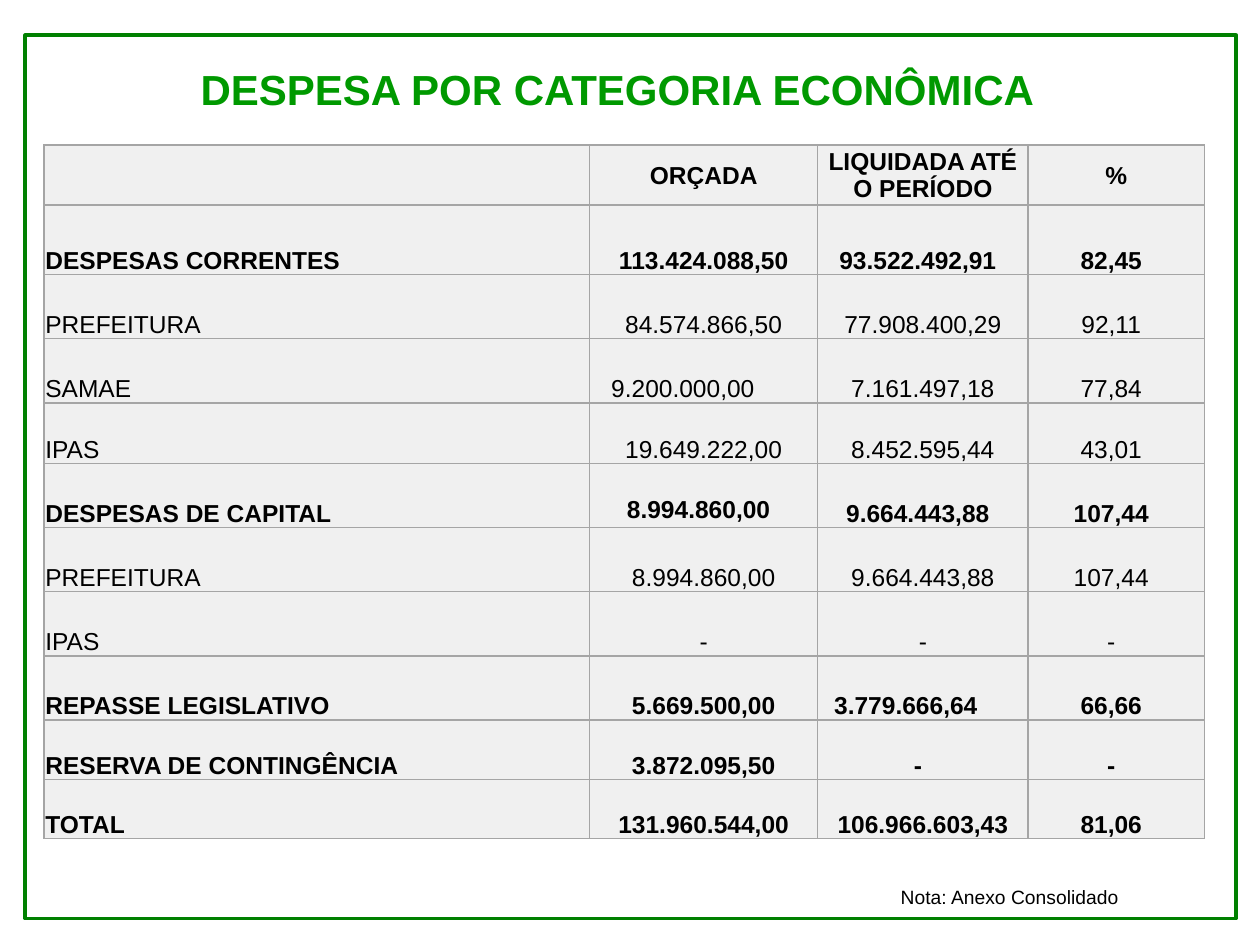
from lxml import etree
from pptx import Presentation
from pptx.dml.color import RGBColor
from pptx.enum import shapes, text
from pptx.oxml import ns
from pptx.util import Inches, Pt

TITLE = "DESPESA POR CATEGORIA ECONÔMICA"
NOTE = "Nota: Anexo Consolidado"
HEADER = ("", "ORÇADA", "LIQUIDADA ATÉ O PERÍODO", "%")
ROWS = [
    ("DESPESAS CORRENTES", "113.424.088,50", "93.522.492,91", "82,45"),
    ("PREFEITURA", "84.574.866,50", "77.908.400,29", "92,11"),
    ("SAMAE", "9.200.000,00", "7.161.497,18", "77,84"),
    ("IPAS", "19.649.222,00", "8.452.595,44", "43,01"),
    ("DESPESAS DE CAPITAL", "8.994.860,00", "9.664.443,88", "107,44"),
    ("PREFEITURA", "8.994.860,00", "9.664.443,88", "107,44"),
    ("IPAS", "-", "-", "-"),
    ("REPASSE LEGISLATIVO", "5.669.500,00", "3.779.666,64", "66,66"),
    ("RESERVA DE CONTINGÊNCIA", "3.872.095,50", "-", "-"),
    ("TOTAL", "131.960.544,00", "106.966.603,43", "81,06"),
]
DETAILS = {"PREFEITURA", "SAMAE", "IPAS"}
COL_WIDTHS = (4.33, 1.81, 1.67, 1.4)
ROW_HEIGHTS = (0.47, 0.55, 0.51, 0.51, 0.48, 0.51, 0.51, 0.51, 0.51, 0.47, 0.47)
RIGHT_INSETS = (0.09, 0.01, 0.01, 0.09)
INSET_EXCEPTIONS = {(1, 2): 0.09, (3, 1): 0.34, (5, 1): 0.09,
                    (5, 2): 0.09, (8, 2): 0.28, (9, 2): 0.09}
BOTTOM_EXCEPTIONS = {(5, 1): 0.03}
FRAME, GREEN, BLACK, GRAY, PALE = "008000", "009900", "000000", "A5A5A5", "F0F0F0"


def rgb(value):
    return RGBColor.from_string(value)


def write(tf, content, align, size, color=BLACK, bold=False):
    p = tf.paragraphs[0]
    p.alignment = align
    r = p.add_run()
    r.text = content
    for name, value in {"name": "Arial", "size": Pt(size), "bold": bold}.items():
        setattr(r.font, name, value)
    r.font.color.rgb = rgb(color)
    return p


def add_text(s, box, content, align, size, anchor, **style):
    tf = s.shapes.add_textbox(*map(Inches, box)).text_frame
    tf.word_wrap = True
    tf.vertical_anchor = anchor
    return write(tf, content, align, size, **style)


def set_borders(cell):
    tc_pr = cell._tc.get_or_add_tcPr()
    for i, side in enumerate(("lnL", "lnR", "lnT", "lnB")):
        ln = etree.Element(ns.qn("a:" + side), w=str(Pt(1)))
        fill = etree.SubElement(ln, ns.qn("a:solidFill"))
        etree.SubElement(fill, ns.qn("a:srgbClr"), val=GRAY)
        tc_pr.insert(i, ln)


def fill_cell(cell, row, col, content, bold):
    cell.fill.solid()
    cell.fill.fore_color.rgb = rgb(PALE)
    set_borders(cell)
    right = INSET_EXCEPTIONS.get((row, col), RIGHT_INSETS[col] if row else 0.01)
    layout = {
        "margin_left": Inches(0.01),
        "margin_top": Inches(0.01),
        "margin_right": Inches(right),
        "margin_bottom": Inches(BOTTOM_EXCEPTIONS.get((row, col), 0)),
        "vertical_anchor": text.MSO_ANCHOR.BOTTOM if row else text.MSO_ANCHOR.MIDDLE,
    }
    for name, value in layout.items():
        setattr(cell, name, value)
    if content:
        align = text.PP_ALIGN.CENTER if col else text.PP_ALIGN.JUSTIFY
        write(cell.text_frame, content, align, 14, bold=bold)


def add_expenses(s):
    data = [HEADER] + ROWS
    box = (0.35, 1.15, sum(COL_WIDTHS), sum(ROW_HEIGHTS))
    table = s.shapes.add_table(len(data), len(HEADER), *map(Inches, box)).table
    for column, width in zip(table.columns, COL_WIDTHS):
        column.width = Inches(width)
    for row, height in zip(table.rows, ROW_HEIGHTS):
        row.height = Inches(height)
    for i, values in enumerate(data):
        for j, content in enumerate(values):
            fill_cell(table.cell(i, j), i, j, content, values[0] not in DETAILS)


def main():
    prs = Presentation()
    prs.slide_width, prs.slide_height = Inches(10), Inches(7.5)
    s = prs.slides.add_slide(prs.slide_layouts[6])
    frame = s.shapes.add_shape(shapes.MSO_SHAPE.RECTANGLE,
                               *map(Inches, (0.2, 0.28, 9.61, 7.01)))
    frame.shadow.inherit = False
    frame.fill.background()
    frame.line.color.rgb = rgb(FRAME)
    frame.line.width = Pt(2.25)
    title = add_text(s, (0.59, 0, 8.62, 1.45), TITLE, text.PP_ALIGN.CENTER, 24,
                     text.MSO_ANCHOR.MIDDLE, color=GREEN, bold=True)
    title.line_spacing = 0.9
    add_expenses(s)
    add_text(s, (7.05, 6.98, 2.6, 0.29), NOTE, text.PP_ALIGN.LEFT, 11,
             text.MSO_ANCHOR.TOP)
    prs.save("out.pptx")


if __name__ == "__main__":
    main()
